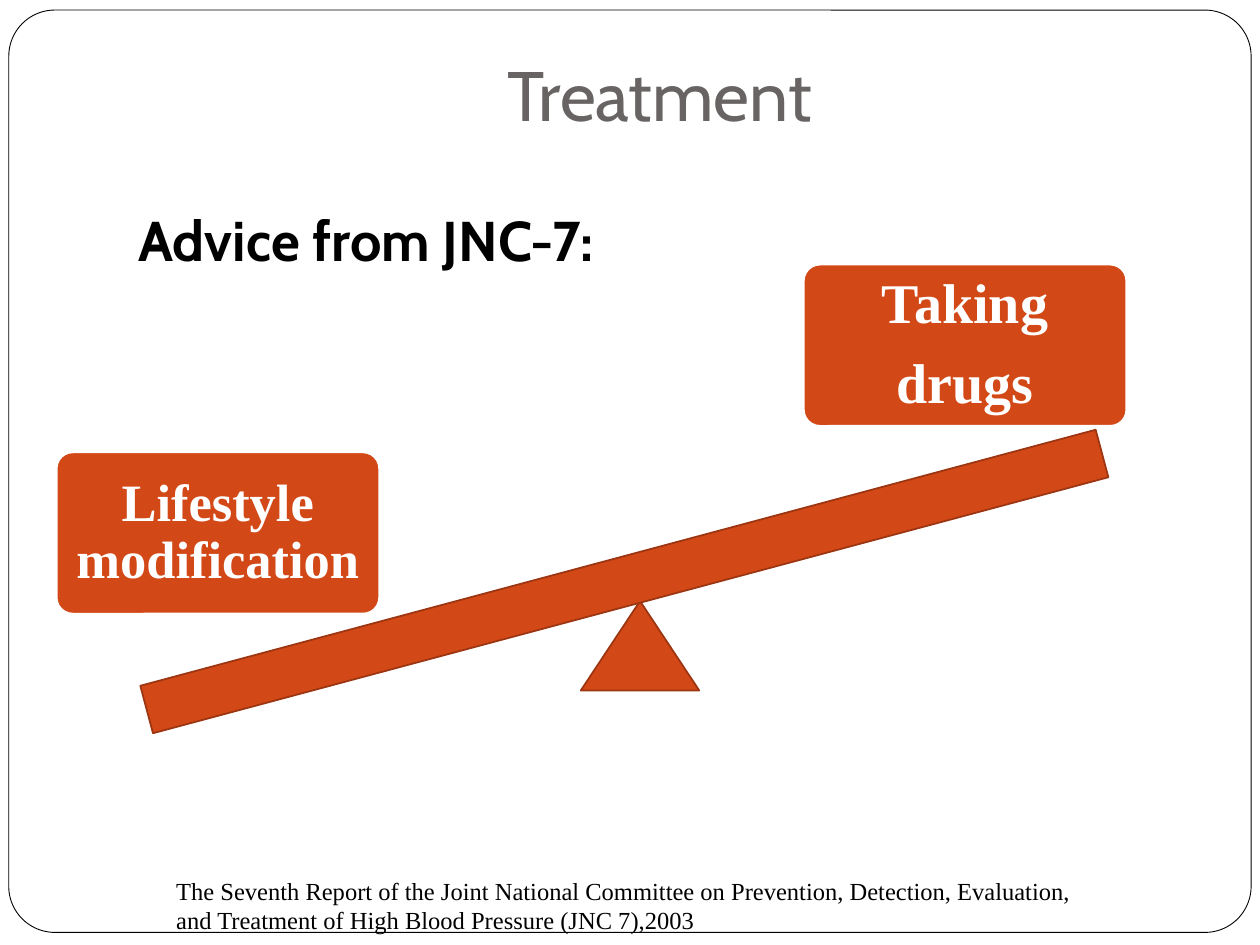
import pptx
import pptx.util
import pptx.dml.color
import pptx.enum.shapes
import pptx.enum.text
from pptx.util import Inches, Pt

RGBColor = pptx.dml.color.RGBColor
MSO_SHAPE = pptx.enum.shapes.MSO_SHAPE
PP_ALIGN = pptx.enum.text.PP_ALIGN
MSO_ANCHOR = pptx.enum.text.MSO_ANCHOR
MSO_AUTO_SIZE = pptx.enum.text.MSO_AUTO_SIZE

ORANGE = RGBColor(0xD3, 0x48, 0x17)
RUST = RGBColor(0x9C, 0x35, 0x11)
GREY = RGBColor(0x69, 0x64, 0x64)
BLACK = RGBColor(0, 0, 0)
WHITE = RGBColor(0xFF, 0xFF, 0xFF)
HEADING_FONT = "Cabin"
SERIF_FONT = "Times New Roman"


def add_block(kind, left, top, width, height, fill, line, line_width=1):
    sp = s.shapes.add_shape(kind, Inches(left), Inches(top), Inches(width), Inches(height))
    sp.shadow.inherit = False
    sp.fill.solid()
    sp.fill.fore_color.rgb = fill
    sp.line.color.rgb = line
    sp.line.width = Pt(line_width)
    return sp


def write(sp, text, font, size, color, bold=False, align=PP_ALIGN.LEFT, anchor=MSO_ANCHOR.TOP):
    tf = sp.text_frame
    tf.text = text
    tf.word_wrap = True
    tf.auto_size = MSO_AUTO_SIZE.NONE
    tf.vertical_anchor = anchor
    for p in tf.paragraphs:
        p.alignment = align
        for r in p.runs:
            r.font.name = font
            r.font.size = Pt(size)
            r.font.bold = bold
            r.font.color.rgb = color
    return tf


prs = pptx.Presentation()
prs.slide_width, prs.slide_height = Inches(10), Inches(7.5)
s = prs.slides.add_slide(prs.slide_layouts[1])

# Rounded frame, sent behind the placeholders
frame = add_block(MSO_SHAPE.ROUNDED_RECTANGLE, 0.07, 0.08, 9.86, 7.32, WHITE, BLACK, 0.5)
frame.adjustments[0] = 0.05
s.shapes._spTree.insert(2, frame._element)

# Title
title = s.shapes.title
title.left, title.top, title.width, title.height = map(Inches, (1.06, 0.36, 8.35, 1.11))
write(title, "Treatment", HEADING_FONT, 40, GREY, align=PP_ALIGN.CENTER)

# Body heading, without a bullet
body = s.placeholders[1]
body.left, body.top, body.width, body.height = map(Inches, (1, 1.58, 8.5, 5))
p = write(body, "Advice from JNC-7:", HEADING_FONT, 32, BLACK, bold=True).paragraphs[0]
p.space_before = Pt(5.8)
pPr = p._p.get_or_add_pPr()
pPr.set("marL", str(Inches(0.3)))
pPr.set("indent", str(Inches(-0.3)))
pPr.append(pptx.oxml.parse_xml(
    '<a:buNone xmlns:a="http://schemas.openxmlformats.org/drawingml/2006/main"/>'))

# Seesaw: pivot and tilted beam
add_block(MSO_SHAPE.ISOSCELES_TRIANGLE, 4.61, 4.77, 0.94, 0.71, ORANGE, RUST)
beam = add_block(MSO_SHAPE.FLOWCHART_PROCESS, 1.03, 4.42, 7.85, 0.39, ORANGE, RUST)
beam.rotation = 345

# Weights on the two ends
for text, left, top, size in [("Lifestyle modification", 0.45, 3.59, 30),
                              ("Taking\ndrugs", 6.38, 2.1, 32)]:
    weight = add_block(MSO_SHAPE.ROUNDED_RECTANGLE, left, top, 2.56, 1.28, ORANGE, WHITE)
    weight.adjustments[0] = 0.1
    tf = write(weight, text, SERIF_FONT, size, WHITE, bold=True,
               align=PP_ALIGN.CENTER, anchor=MSO_ANCHOR.MIDDLE)
    tf.margin_left = tf.margin_right = Inches(0.1)
    tf.margin_top = tf.margin_bottom = Inches(0.08)
    for p in tf.paragraphs:
        p.line_spacing = 0.9
        p.space_after = Pt(0.35 * size)

# Reference
reference = s.shapes.add_textbox(Inches(1.3), Inches(6.9), Inches(7.4), Inches(0.57))
write(reference, "The Seventh Report of the Joint National Committee on Prevention, Detection, "
      "Evaluation, and Treatment of High Blood Pressure (JNC 7),2003", SERIF_FONT, 14, BLACK)

prs.save("out.pptx")
